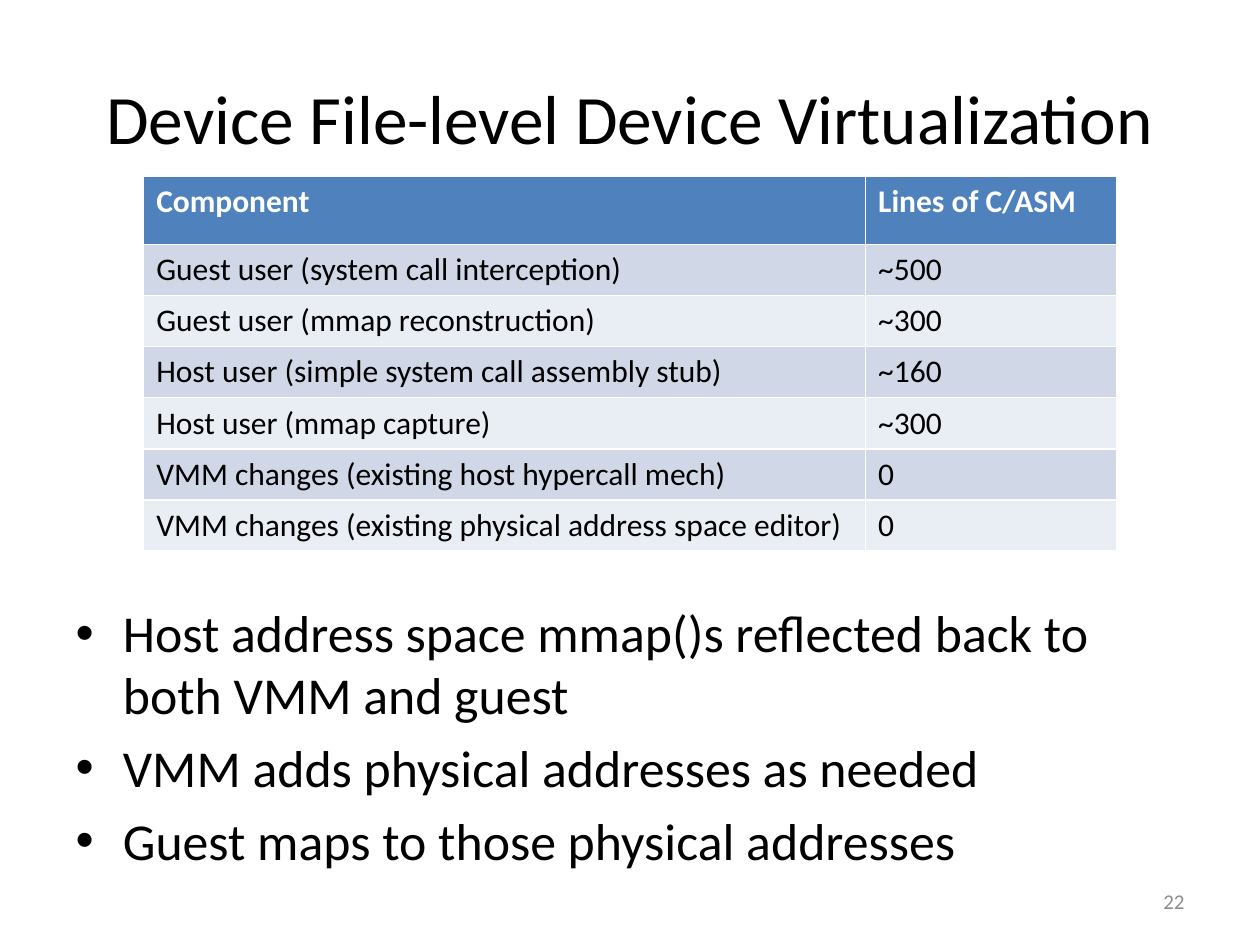
from pptx import Presentation
from pptx.dml.color import RGBColor
from pptx.enum.text import MSO_ANCHOR, MSO_AUTO_SIZE, PP_ALIGN
from pptx.util import Inches, Pt

COLORS = {"text": "000000", "header": "4F81BD", "header_text": "FFFFFF",
          "band_dark": "D0D8E8", "band_light": "E9EDF4", "number": "8C8C8C"}

COMPONENTS = [
    ("Component", "Lines of C/ASM"),
    ("Guest user (system call interception)", "~500"),
    ("Guest user (mmap reconstruction)", "~300"),
    ("Host user (simple system call assembly stub)", "~160"),
    ("Host user (mmap capture)", "~300"),
    ("VMM changes (existing host hypercall mech)", "0"),
    ("VMM changes (existing physical address space editor)", "0"),
]

POINTS = [
    "Host address space mmap()s reflected back to both VMM and guest",
    "VMM adds physical addresses as needed",
    "Guest maps to those physical addresses",
]


class SlideBuilder:
    font = "Calibri"

    def __init__(self, s):
        self.s = s

    def style(self, p, size, color="text", bold=False, align=None):
        p.font.name = self.font
        p.font.size = Pt(size)
        p.font.bold = bold
        p.font.color.rgb = RGBColor.from_string(COLORS[color])
        if align is not None:
            p.alignment = align

    def place(self, sp, left, top, width, height):
        sp.left, sp.top = Inches(left), Inches(top)
        sp.width, sp.height = Inches(width), Inches(height)
        sp.text_frame.word_wrap = True
        sp.text_frame.auto_size = MSO_AUTO_SIZE.NONE

    def title(self, text, box, size):
        sp = self.s.shapes.title
        self.place(sp, *box)
        tf = sp.text_frame
        tf.text = text
        tf.vertical_anchor = MSO_ANCHOR.MIDDLE
        self.style(tf.paragraphs[0], size, align=PP_ALIGN.CENTER)

    def bullets(self, items, box, size):
        # Bullets, indents and spacing come from the body placeholder
        sp = self.s.placeholders[1]
        self.place(sp, *box)
        tf = sp.text_frame
        tf.text = "\n".join(items)
        for p in tf.paragraphs:
            self.style(p, size)

    def table(self, data, left, top, widths, heights, size):
        # The default table style supplies the white cell borders
        table = self.s.shapes.add_table(
            len(data), len(widths), Inches(left), Inches(top),
            Inches(sum(widths)), Inches(sum(heights))).table
        for column, width in zip(table.columns, widths):
            column.width = Inches(width)
        for i, (row, height) in enumerate(zip(table.rows, heights)):
            row.height = Inches(height)
            header = i == 0
            fill = "header" if header else "band_dark" if i % 2 else "band_light"
            for cell, text in zip(row.cells, data[i]):
                cell.text = text
                cell.fill.solid()
                cell.fill.fore_color.rgb = RGBColor.from_string(COLORS[fill])
                self.style(cell.text_frame.paragraphs[0], size,
                           "header_text" if header else "text", header)

    def slide_number(self, text, box, size):
        sp = self.s.shapes.add_textbox(0, 0, 0, 0)
        self.place(sp, *box)
        tf = sp.text_frame
        tf.text = text
        tf.vertical_anchor = MSO_ANCHOR.MIDDLE
        self.style(tf.paragraphs[0], size, "number", align=PP_ALIGN.RIGHT)


def main():
    prs = Presentation()
    prs.slide_width, prs.slide_height = Inches(10), Inches(7.5)
    b = SlideBuilder(prs.slides.add_slide(prs.slide_layouts[1]))

    # Title and bullet list
    b.title("Device File-level Device Virtualization", (0.5, 0.3, 9, 1.25), 39.6)
    b.bullets(POINTS, (0.5, 4.72, 9, 1.98), 29.6)

    # Code size per component
    b.table(COMPONENTS, 1.14, 1.4, [5.73, 1.99],
            [0.54] + [0.4] * (len(COMPONENTS) - 1), 18)

    # Slide number
    b.slide_number("22", (7.17, 6.95, 2.33, 0.4), 12)

    prs.save("out.pptx")


if __name__ == "__main__":
    main()
